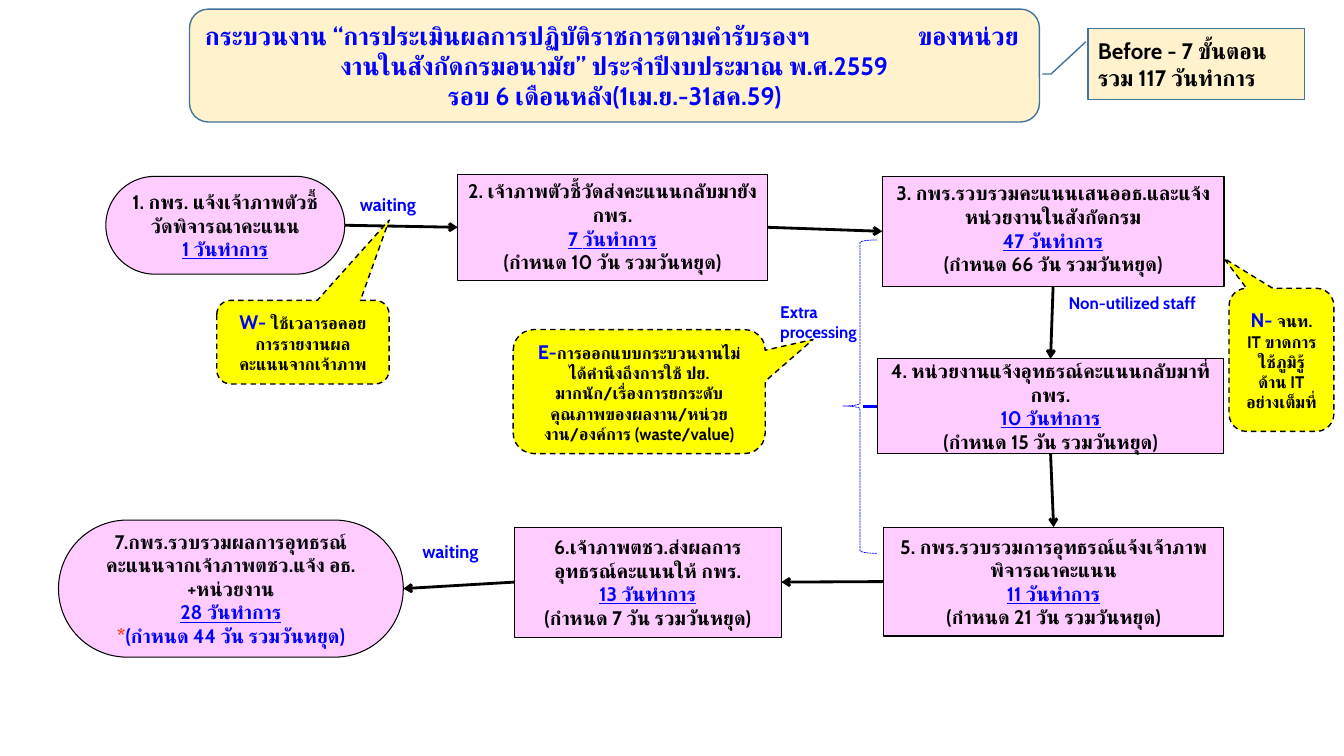
from dataclasses import dataclass

from lxml.etree import SubElement
from pptx import Presentation
from pptx.dml.color import RGBColor
from pptx.enum.dml import MSO_LINE
from pptx.enum.shapes import MSO_CONNECTOR, MSO_SHAPE
from pptx.enum.text import MSO_ANCHOR, MSO_AUTO_SIZE, PP_ALIGN
from pptx.oxml.ns import qn
from pptx.util import Inches, Pt

FONT = "Cabin"
BLACK, INK, BLUE, RED = "000000", "07080B", "0000FF", "FF3300"
PINK, YELLOW, CREAM, STEEL = "FFCCFF", "FFFF00", "FFF2CC", "43739E"
TOP, LEFT, BOTTOM, RIGHT = range(4)


@dataclass
class Span:
    text: str
    color: str = BLACK
    size: float = 14
    underline: bool = False


@dataclass
class Step:
    box: tuple
    title: list
    days: str
    limit: list
    kind: MSO_SHAPE = MSO_SHAPE.RECTANGLE
    anchor: MSO_ANCHOR = MSO_ANCHOR.MIDDLE


@dataclass
class Arrow:
    start: int
    start_side: int
    end: int
    end_side: int


@dataclass
class Waste:
    box: tuple
    adjustments: tuple
    code: str
    text: str


@dataclass
class Label:
    box: tuple
    text: str
    size: float
    wrap: bool


def rgb(color: str) -> RGBColor:
    return RGBColor.from_string(color)


def write_text(shape, paragraphs, align=PP_ALIGN.CENTER, anchor=MSO_ANCHOR.MIDDLE, wrap=True):
    frame = shape.text_frame
    frame.word_wrap = wrap
    frame.vertical_anchor = anchor
    for index, spans in enumerate(paragraphs):
        paragraph = frame.add_paragraph() if index else frame.paragraphs[0]
        paragraph.alignment = align
        for span in spans:
            run = paragraph.add_run()
            run.text = span.text
            font = run.font
            font.name, font.size, font.bold = FONT, Pt(span.size), True
            font.underline = span.underline
            font.color.rgb = rgb(span.color)
            SubElement(font._element, qn("a:cs")).set("typeface", FONT)
    return frame


def add_box(kind, box, fill=None, line=BLACK, width=0.75, dash=None, adjustments=()):
    shape = slide.shapes.add_shape(kind, *map(Inches, box))
    shape.shadow.inherit = False
    if fill:
        shape.fill.solid()
        shape.fill.fore_color.rgb = rgb(fill)
    else:
        shape.fill.background()
    shape.line.color.rgb = rgb(line)
    shape.line.width = Pt(width)
    if dash:
        shape.line.dash_style = dash
    for index, value in enumerate(adjustments):
        shape.adjustments[index] = value
    return shape


def add_line(color: str, start=(0, 0), arrow=False):
    x, y = map(Inches, start)
    connector = slide.shapes.add_connector(MSO_CONNECTOR.STRAIGHT, x, y, x, y)
    connector.line.color.rgb = rgb(color)
    connector.line.width = Pt(2)
    if arrow:
        SubElement(connector.line._get_or_add_ln(), qn("a:tailEnd")).set("type", "arrow")
    SubElement(connector._element.spPr, qn("a:effectLst"))
    return connector


STEPS = [
    Step((1.05, 1.75, 2.37, 0.97),
         [Span("1. กพร. แจ้งเจ้าภาพ"), Span("ตัวชี้วัดพิจารณาคะแนน", INK)],
         "1 วันทำการ", [], MSO_SHAPE.ROUNDED_RECTANGLE),
    Step((4.54, 1.73, 3.07, 1.05), [Span("2. เจ้าภาพตัวชี้วัดส่งคะแนนกลับมายังกพร.")],
         "7 วันทำการ", [Span("(กำหนด 10 วัน รวมวันหยุด)")], anchor=MSO_ANCHOR.TOP),
    Step((8.75, 1.75, 3.39, 1.09), [Span("3. กพร.รวบรวมคะแนนเสนออธ.และแจ้งหน่วยงานในสังกัดกรม")],
         "47 วันทำการ", [Span("(กำหนด 66 วัน รวมวันหยุด)")], anchor=MSO_ANCHOR.TOP),
    Step((8.7, 3.56, 3.44, 0.94), [Span("4. หน่วยงานแจ้งอุทธรณ์คะแนนกลับมาที่ กพร.")],
         "10 วันทำการ", [Span("(กำหนด 15 วัน รวมวันหยุด)")]),
    Step((8.76, 5.23, 3.38, 1.08), [Span("5. กพร.รวบรวมการอุทธรณ์แจ้งเจ้าภาพพิจารณาคะแนน")],
         "11 วันทำการ", [Span("(กำหนด 21 วัน รวมวันหยุด)")]),
    Step((5.1, 5.23, 2.65, 1.09), [Span("6.เจ้าภาพตชว.ส่งผลการอุทธรณ์คะแนนให้ กพร.")],
         "13 วันทำการ", [Span("(กำหนด 7 วัน รวมวันหยุด)")]),
    Step((0.58, 5.16, 3.42, 1.36),
         [Span("7.กพร.รวบรวมผลการอุทธรณ์คะแนนจากเจ้าภาพตชว.แจ้ง อธ.+หน่วยงาน", INK)],
         "28 วันทำการ", [Span("*", RED), Span("(กำหนด 44 วัน รวมวันหยุด)", BLUE)],
         MSO_SHAPE.ROUNDED_RECTANGLE),
]
ARROWS = [
    Arrow(1, RIGHT, 2, LEFT), Arrow(2, RIGHT, 3, LEFT), Arrow(3, BOTTOM, 4, TOP),
    Arrow(4, BOTTOM, 5, TOP), Arrow(5, LEFT, 6, RIGHT), Arrow(6, LEFT, 7, RIGHT),
]
WASTES = [
    Waste((2.15, 2.98, 1.71, 0.83), (0.5, -1.46), "W- ", "ใช้เวลารอคอยการรายงานผลคะแนนจากเจ้าภาพ"),
    Waste((12.19, 2.86, 1.04, 1.42), (-0.55, -0.71), "N- ",
          "จนท. IT ขาดการใช้ภูมิรู้ด้าน IT อย่างเต็มที่"),
    Waste((5.09, 3.27, 2.5, 1.23), (0.69, -0.42), "E-",
          "การออกแบบกระบวนงานไม่ได้คำนึงถึงการใช้ ปย. มากนัก/เรื่องการยกระดับ"
          "คุณภาพของผลงาน/หน่วยงาน/องค์การ (waste/value)"),
]
LABELS = [
    Label((3.47, 1.87, 0.89, 0.32), "waiting", 13, False),
    Label((4.09, 5.31, 0.89, 0.32), "waiting", 13, False),
    Label((10.5, 2.86, 1.68, 0.3), "Non-utilized staff", 12, True),
    Label((7.64, 2.94, 1.12, 0.5), "Extra processing", 12, True),
]

presentation = Presentation()
presentation.slide_width, presentation.slide_height = Inches(13.33), Inches(7.5)
slide = presentation.slides.add_slide(presentation.slide_layouts[6])

# Title, with a tab stop for the gap in its first line
title = add_box(MSO_SHAPE.ROUNDED_RECTANGLE, (1.88, 0.09, 8.43, 1.12), CREAM, STEEL, 1)
title_lines = [
    "กระบวนงาน “การประเมินผลการปฏิบัติราชการตามคำรับรองฯ\tของหน่วย",
    "งานในสังกัดกรมอนามัย” ประจำปีงบประมาณ พ.ศ.2559",
    "รอบ 6 เดือนหลัง(1เม.ย.-31สค.59)",
]
title_frame = write_text(title, [[Span(line, BLUE, 18)] for line in title_lines])
first_line = title_frame.paragraphs[0]
first_line.alignment = PP_ALIGN.LEFT
tab = SubElement(SubElement(first_line._p.get_or_add_pPr(), qn("a:tabLst")), qn("a:tab"))
tab.set("pos", str(Inches(7.07)))
tab.set("algn", "l")

# Summary callout
summary = add_box(MSO_SHAPE.LINE_CALLOUT_2, (10.79, 0.28, 2.15, 0.71), CREAM, STEEL, 1,
                  adjustments=(0.19, -0.01, 0.64, -0.17, 0.64, -0.21))
write_text(summary, [[Span("Before - 7 ขั้นตอน รวม 117 วันทำการ", size=16)]], align=PP_ALIGN.LEFT)

# Process steps
step_shapes = []
for step in STEPS:
    rounding = (0.5,) if step.kind == MSO_SHAPE.ROUNDED_RECTANGLE else ()
    shape = add_box(step.kind, step.box, PINK, adjustments=rounding)
    lines = [step.title, [Span(step.days, BLUE, underline=True)], step.limit]
    write_text(shape, [line for line in lines if line], anchor=step.anchor)
    step_shapes.append(shape)

# Flow arrows
for arrow in ARROWS:
    connector = add_line(BLACK, arrow=True)
    connector.begin_connect(step_shapes[arrow.start - 1], arrow.start_side)
    connector.end_connect(step_shapes[arrow.end - 1], arrow.end_side)

# Waste callouts
for waste in WASTES:
    callout = add_box(MSO_SHAPE.ROUNDED_RECTANGULAR_CALLOUT, waste.box, YELLOW, width=1,
                      dash=MSO_LINE.DASH, adjustments=waste.adjustments)
    write_text(callout, [[Span(waste.code, BLUE), Span(waste.text, size=12)]])

# Brace over steps 3 to 5
add_box(MSO_SHAPE.LEFT_BRACE, (8.36, 2.38, 0.34, 3.11), line=BLUE, width=0.5,
        dash=MSO_LINE.SQUARE_DOT, adjustments=(0.08, 0.53))
add_line(BLUE, (8.56, 4.03)).end_connect(step_shapes[3], LEFT)

# Labels
for label in LABELS:
    text_box = slide.shapes.add_textbox(*map(Inches, label.box))
    frame = write_text(text_box, [[Span(label.text, BLUE, label.size)]], align=PP_ALIGN.LEFT,
                       anchor=MSO_ANCHOR.TOP, wrap=label.wrap)
    frame.auto_size = MSO_AUTO_SIZE.SHAPE_TO_FIT_TEXT

presentation.save("out.pptx")
